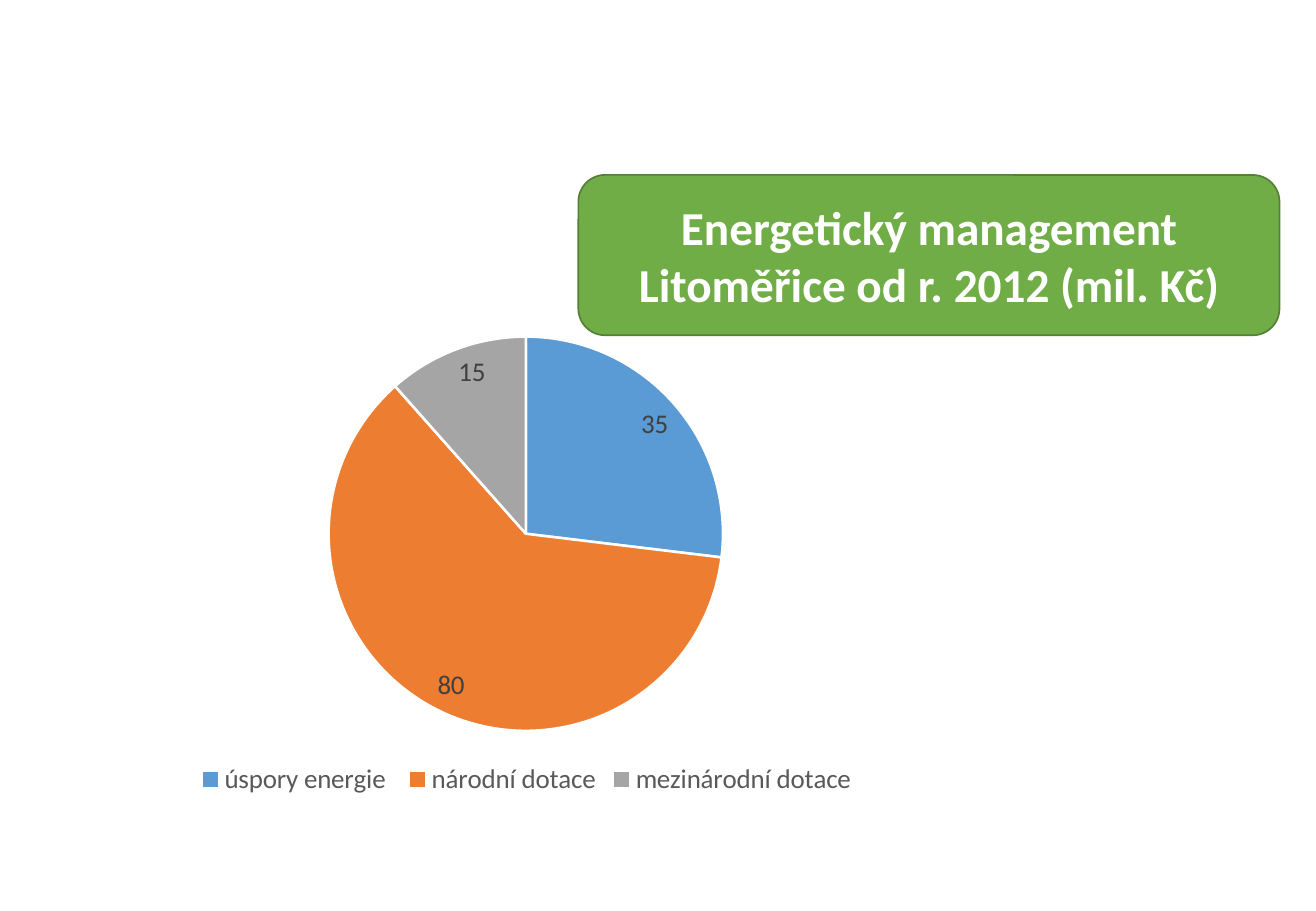
from lxml import etree
from pptx import Presentation
from pptx.chart.data import CategoryChartData
from pptx.dml.color import RGBColor
from pptx.enum.chart import XL_CHART_TYPE, XL_LABEL_POSITION, XL_LEGEND_POSITION
from pptx.enum.shapes import MSO_SHAPE
from pptx.enum.text import MSO_ANCHOR, PP_ALIGN
from pptx.oxml.ns import qn
from pptx.util import Inches, Pt

PIE = XL_CHART_TYPE.PIE
INSIDE_END = XL_LABEL_POSITION.INSIDE_END
BOTTOM = XL_LEGEND_POSITION.BOTTOM
ROUNDED = MSO_SHAPE.ROUNDED_RECTANGLE
MIDDLE = MSO_ANCHOR.MIDDLE
CENTER = PP_ALIGN.CENTER

COLORS = {
    "green": "70AD47", "dark_green": "538035", "white": "FFFFFF",
    "blue": "5B9BD5", "orange": "ED7D31", "gray": "A5A5A5",
    "label": "404040", "legend": "595959", "black": "000000",
}
FUNDING = [
    ("úspory energie ", 35, "blue"),
    ("národní dotace", 80, "orange"),
    ("mezinárodní dotace", 15, "gray"),
]
PLOT_AREA = {"x": 0.285, "y": 0.073, "w": 0.428, "h": 0.786}


def rgb(name):
    return RGBColor.from_string(COLORS[name])


def set_font(font, color, size, bold=False):
    values = {"name": "Calibri", "size": Pt(size), "bold": bold}
    for key, value in values.items():
        setattr(font, key, value)
    font.color.rgb = rgb(color)


def set_plot_area(chart, area):
    """Fix the inner plot area as fractions of the chart frame."""
    plot_area = chart.plots[0]._element.getparent()
    for old in plot_area.findall(qn("c:layout")):
        plot_area.remove(old)
    layout = etree.Element(qn("c:layout"))
    manual = etree.SubElement(layout, qn("c:manualLayout"))
    settings = {"layoutTarget": "inner", "xMode": "edge", "yMode": "edge", **area}
    for tag, value in settings.items():
        etree.SubElement(manual, qn(f"c:{tag}")).set("val", str(value))
    plot_area.insert(0, layout)


def add_title_box(s, text, left, top, width, height):
    sp = s.shapes.add_shape(ROUNDED, Inches(left), Inches(top),
                            Inches(width), Inches(height))
    sp.shadow.inherit = False
    sp.fill.solid()
    sp.fill.fore_color.rgb = rgb("green")
    sp.line.color.rgb = rgb("dark_green")
    sp.line.width = Pt(1)
    tf = sp.text_frame
    tf.word_wrap = True
    tf.vertical_anchor = MIDDLE
    p = tf.paragraphs[0]
    p.alignment = CENTER
    r = p.add_run()
    r.text = text
    set_font(r.font, "white", 28, bold=True)


def add_pie(s, rows, left, top, width, height):
    data = CategoryChartData()
    data.categories = [name for name, _, _ in rows]
    data.add_series("Series 1", [value for _, value, _ in rows])
    chart = s.shapes.add_chart(PIE, Inches(left), Inches(top), Inches(width),
                               Inches(height), data).chart
    set_font(chart.font, "black", 10)
    chart.has_title = False
    set_plot_area(chart, PLOT_AREA)

    # Legend
    chart.has_legend = True
    chart.legend.position = BOTTOM
    chart.legend.include_in_layout = False
    set_font(chart.legend.font, "legend", 16)

    # Slices
    plot = chart.plots[0]
    plot.vary_by_categories = True
    for i, (_, _, color) in enumerate(rows):
        fmt = plot.series[0].points[i].format
        fmt.fill.solid()
        fmt.fill.fore_color.rgb = rgb(color)
        fmt.line.color.rgb = rgb("white")
        fmt.line.width = Pt(1.5)

    # Value labels
    labels = plot.series[0].data_labels
    labels.show_value = True
    labels.position = INSIDE_END
    set_font(labels.font, "label", 16)


def main():
    prs = Presentation()
    prs.slide_width, prs.slide_height = Inches(10.83), Inches(7.5)
    s = prs.slides.add_slide(prs.slide_layouts[6])
    add_title_box(s, "Energetický management Litoměřice od r. 2012 (mil. Kč)",
                  4.76, 1.44, 5.77, 1.32)
    add_pie(s, FUNDING, 0.54, 2.47, 7.59, 4.13)
    prs.save("out.pptx")


if __name__ == "__main__":
    main()
